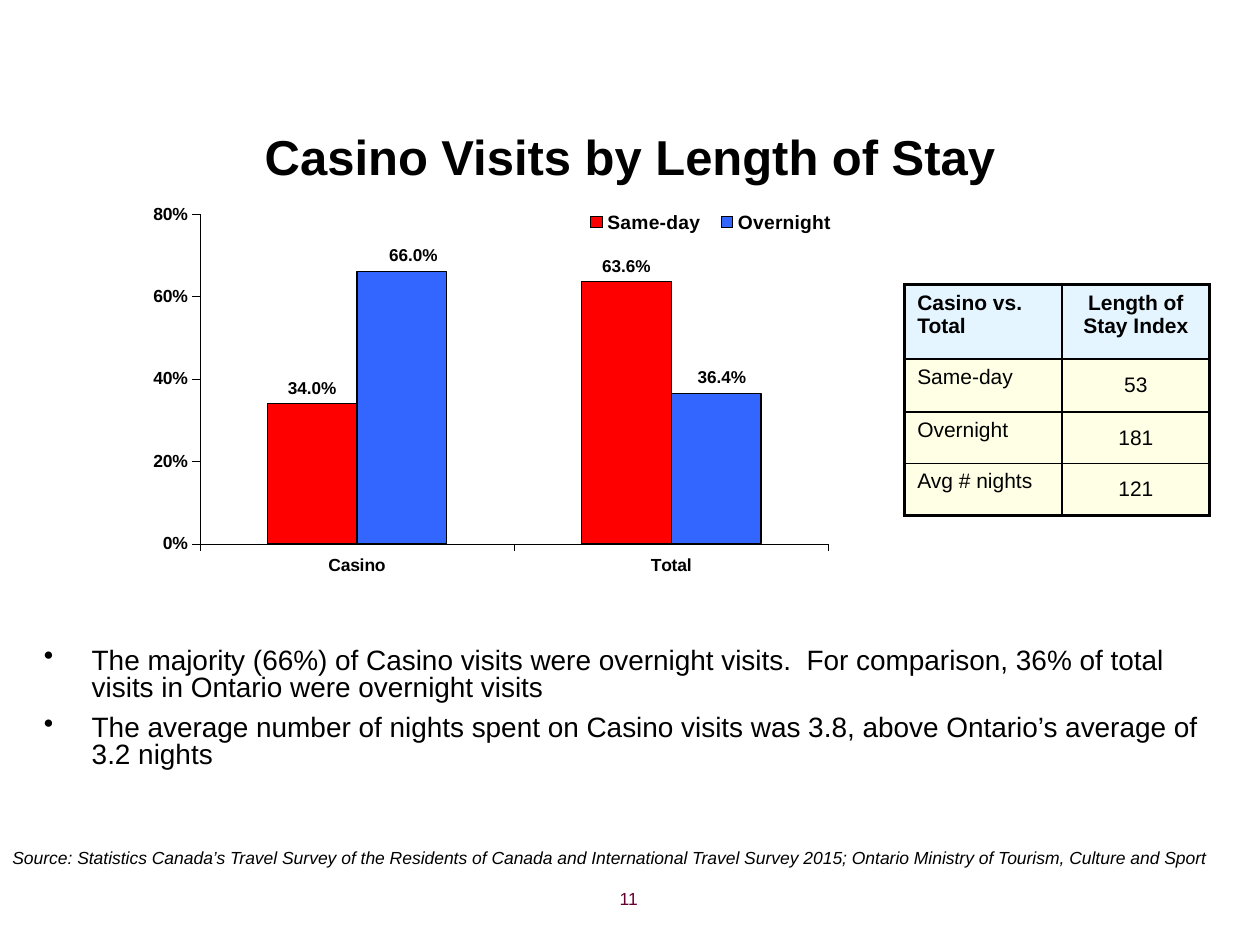
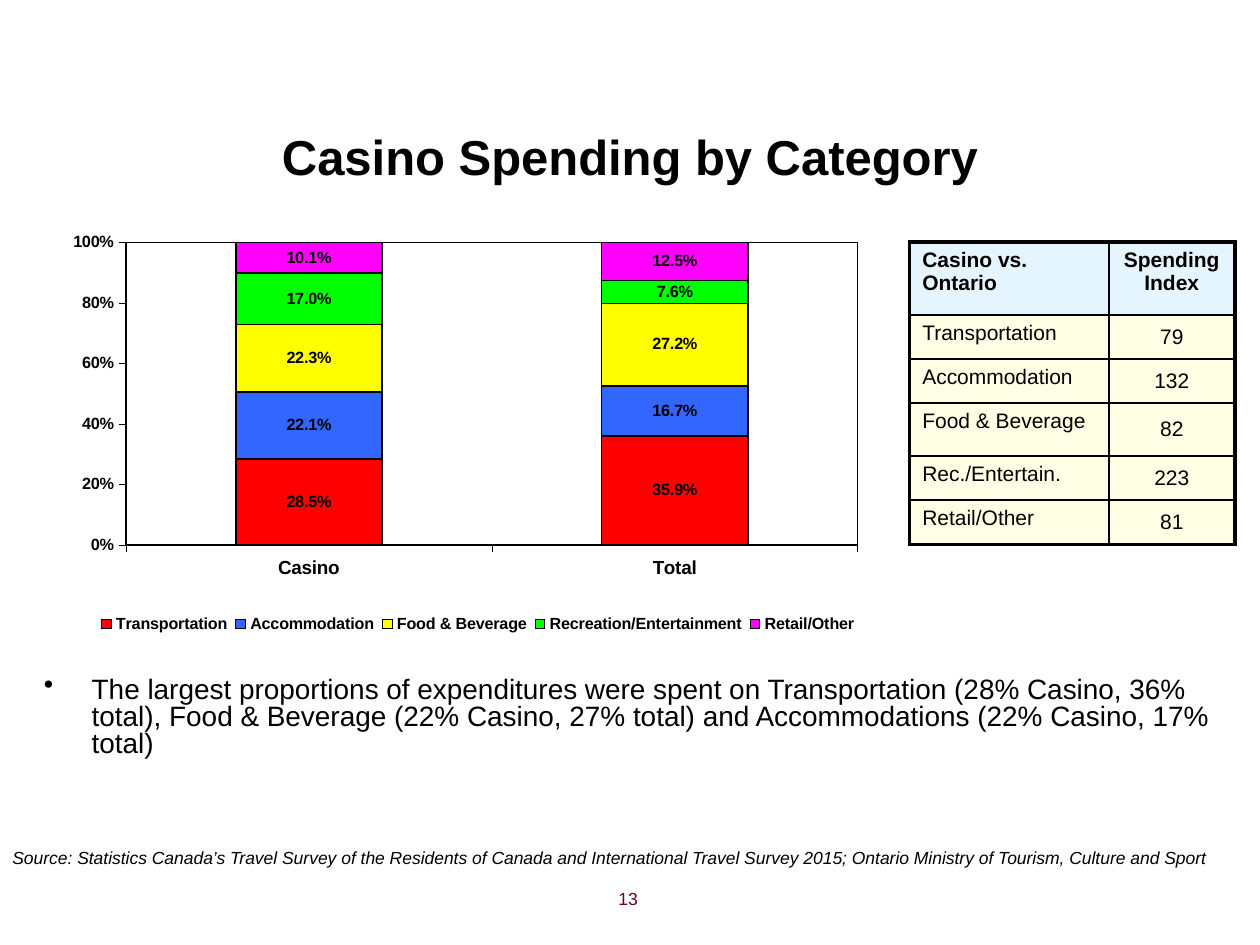
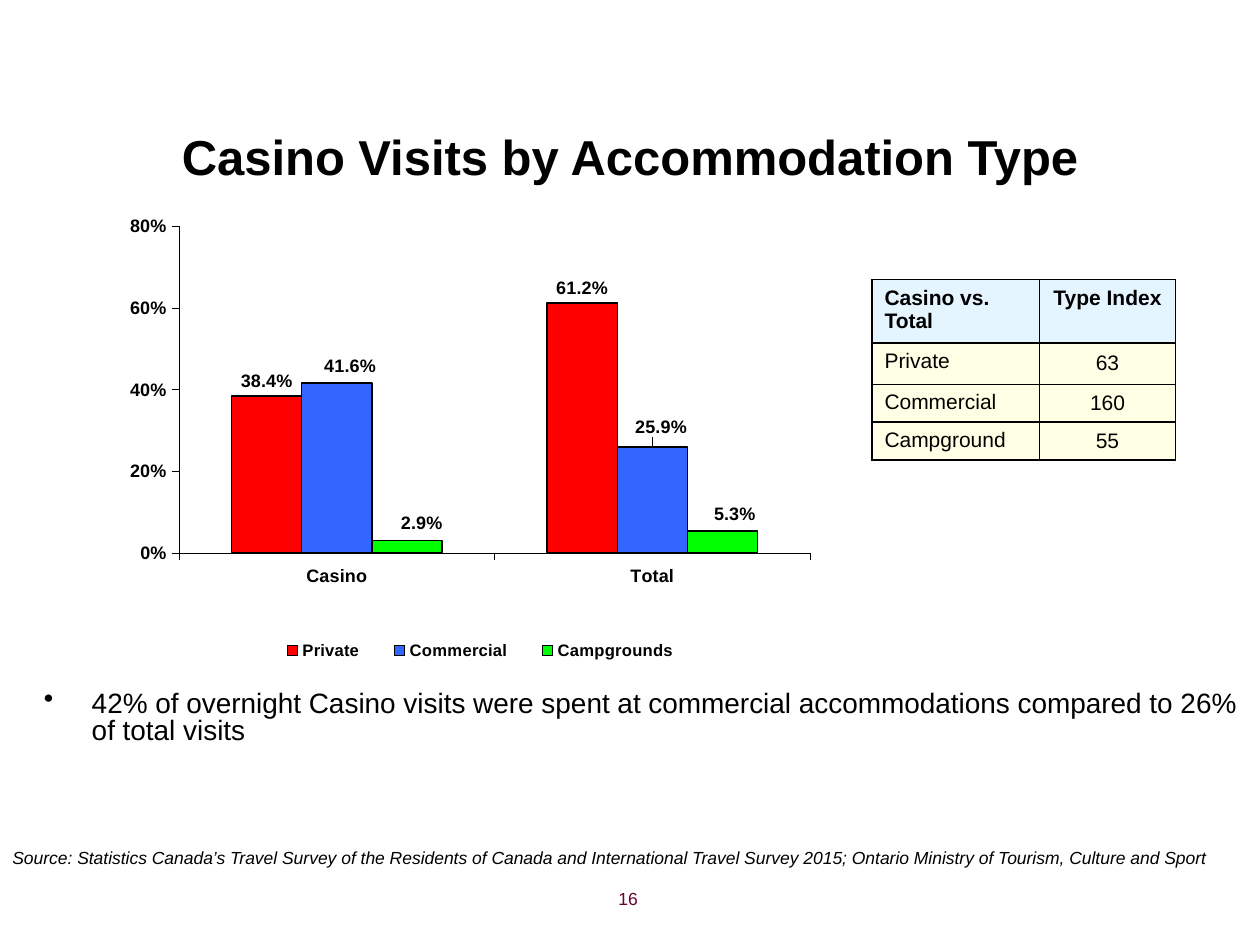
from pptx import Presentation
from pptx.chart.data import CategoryChartData
from pptx.dml.color import RGBColor
from pptx.enum.chart import XL_CHART_TYPE, XL_LABEL_POSITION, XL_LEGEND_POSITION, XL_TICK_MARK
from pptx.enum.text import MSO_ANCHOR, PP_ALIGN
from pptx.oxml import parse_xml
from pptx.oxml.ns import nsdecls, qn
from pptx.util import Inches, Pt

BLACK = RGBColor(0x00, 0x00, 0x00)
PAGE_MAROON = RGBColor(0x66, 0x00, 0x33)
HEADER_BLUE = RGBColor(0xCC, 0xEC, 0xFF)
BODY_CREAM = RGBColor(0xFF, 0xFF, 0xCC)
SERIES_COLORS = [
    RGBColor(0xFF, 0x00, 0x00),
    RGBColor(0x33, 0x66, 0xFF),
    RGBColor(0xFF, 0xFF, 0x00),
    RGBColor(0x00, 0xFF, 0x00),
    RGBColor(0xFF, 0x00, 0xFF),
]
RED, BLUE, YELLOW, GREEN, MAGENTA = SERIES_COLORS
FONT = "Arial"
SOURCE = ("Source: Statistics Canada’s Travel Survey of the Residents of Canada and International "
          "Travel Survey 2015; Ontario Ministry of Tourism, Culture and Sport")
CLUSTERED = XL_CHART_TYPE.COLUMN_CLUSTERED
STACKED = XL_CHART_TYPE.COLUMN_STACKED_100

# Chart layouts are fractions of the chart; label shifts are keyed by (series, category).
SLIDES = [
    dict(
        title="Casino Visits by Length of Stay", page="11",
        chart=dict(
            type=CLUSTERED, at=(0.83, 1.5, 7.64, 3.77), top=0.8, axis_line=0.19, bar_line=0.75,
            plot=(0.099, 0.053, 0.653, 0.694), legend=(0.49, 0.04, 0.28, 0.06),
            sizes=dict(category=10, value=10, legend=11, label=9.8),
            series=[("Same-day", RED, (0.34, 0.636)), ("Overnight", BLUE, (0.66, 0.364))],
            shifts={(1, 0): (0.012, -0.004), (1, 1): (0.006, -0.004)},
        ),
        table=dict(
            at=(7.18, 2.26), columns=(1.25, 1.17), heights=(0.59, 0.42, 0.41, 0.41), frame=2.25,
            rows=[("Casino vs. Total", "Length of Stay Index"), ("Same-day", "53"),
                  ("Overnight", "181"), ("Avg # nights", "121")],
        ),
        bullets_at=(0.25, 5.1, 9.5, 1.67),
        bullets=[
            "The majority (66%) of Casino visits were overnight visits.  For comparison, 36% of "
            "total visits in Ontario were overnight visits",
            "The average number of nights spent on Casino visits was 3.8, above Ontario’s average "
            "of 3.2 nights",
        ],
    ),
    dict(
        title="Casino Spending by Category", page="13",
        chart=dict(
            type=STACKED, at=(0.31, 1.8, 6.57, 3.8), top=1, axis_line=0.25, bar_line=1,
            plot=(0.105, 0.033, 0.884, 0.632), legend=(0.065, 0.8, 0.93, 0.06),
            sizes=dict(category=10.8, value=9.3, legend=9.2, label=9.3),
            series=[("Transportation", RED, (0.285, 0.359)),
                    ("Accommodation", BLUE, (0.221, 0.167)),
                    ("Food & Beverage", YELLOW, (0.223, 0.272)),
                    ("Recreation/Entertainment", GREEN, (0.17, 0.076)),
                    ("Retail/Other", MAGENTA, (0.101, 0.125))],
            shifts={},
        ),
        table=dict(
            at=(7.22, 1.92), columns=(1.58, 1), heights=(0.58, 0.35, 0.35, 0.42, 0.35, 0.35),
            frame=2.25,
            rows=[("Casino vs. Ontario", "Spending Index"), ("Transportation", "79"),
                  ("Accommodation", "132"), ("Food & Beverage", "82"),
                  ("Rec./Entertain.", "223"), ("Retail/Other", "81")],
        ),
        bullets_at=(0.25, 5.33, 9.5, 1.42),
        bullets=[
            "The largest proportions of expenditures were spent on Transportation (28% Casino, 36% "
            "total), Food & Beverage (22% Casino, 27% total) and Accommodations (22% Casino, 17% "
            "total)",
        ],
    ),
    dict(
        title="Casino Visits by Accommodation Type", page="16",
        chart=dict(
            type=CLUSTERED, at=(0.81, 1.59, 5.89, 3.76), top=0.8, axis_line=0.18, bar_line=0.75,
            plot=(0.104, 0.055, 0.85, 0.689), legend=(0.21, 0.92, 0.6, 0.06),
            sizes=dict(category=10.3, value=10.3, legend=9.5, label=10.3),
            series=[("Private", RED, (0.384, 0.612)), ("Commercial", BLUE, (0.416, 0.259)),
                    ("Campgrounds", GREEN, (0.029, 0.053))],
            shifts={(1, 0): (0.018, -0.004), (1, 1): (0.012, -0.01),
                    (2, 0): (0.02, -0.006), (2, 1): (0.017, -0.004)},
        ),
        table=dict(
            at=(6.92, 2.22), columns=(1.33, 1.08), heights=(0.5, 0.33, 0.3, 0.3), frame=1,
            rows=[("Casino vs. Total", "Type Index"), ("Private", "63"),
                  ("Commercial", "160"), ("Campground", "55")],
        ),
        bullets_at=(0.25, 5.44, 9.67, 1.52),
        bullets=[
            "42% of overnight Casino visits were spent at commercial accommodations compared to "
            "26% of total visits",
        ],
    ),
]


def add_text(slide, at, lines, size, color=BLACK, align=PP_ALIGN.LEFT, bold=False, italic=False,
             anchor=MSO_ANCHOR.TOP, bulleted=False):
    frame = slide.shapes.add_textbox(*map(Inches, at)).text_frame
    frame.word_wrap = True
    frame.vertical_anchor = anchor
    frame.text = "\n".join(lines)
    for number, paragraph in enumerate(frame.paragraphs):
        paragraph.alignment = align
        if bulleted:
            paragraph.line_spacing = 0.8
            if number:
                paragraph.space_before = Pt(8)
            properties = paragraph._p.get_or_add_pPr()
            properties.set("marL", str(Inches(0.38)))
            properties.set("indent", str(Inches(-0.38)))
            properties.append(parse_xml(f'<a:buChar {nsdecls("a")} char="•"/>'))
        font = paragraph.font
        font.name, font.size, font.bold, font.italic = FONT, Pt(size), bold, italic
        font.color.rgb = color


def set_layout(parent, index, x, y, size=None, inner=False):
    """Place a chart part: by edge and size, or as a shift when no size is given."""
    for old in parent.findall(qn("c:layout")):
        parent.remove(old)
    parts = '<c:layoutTarget val="inner"/>' if inner else ""
    if size:
        parts += '<c:xMode val="edge"/><c:yMode val="edge"/>'
    parts += f'<c:x val="{x}"/><c:y val="{y}"/>'
    if size:
        parts += f'<c:w val="{size[0]}"/><c:h val="{size[1]}"/>'
    parent.insert(index, parse_xml(
        f'<c:layout {nsdecls("c")}><c:manualLayout>{parts}</c:manualLayout></c:layout>'))


prs = Presentation()
prs.slide_width, prs.slide_height = Inches(10), Inches(7.5)

for content in SLIDES:
    slide = prs.slides.add_slide(prs.slide_layouts[6])
    add_text(slide, (0.5, 0.86, 9, 0.75), [content["title"]], 28, align=PP_ALIGN.CENTER,
             bold=True, anchor=MSO_ANCHOR.MIDDLE)

    # Chart
    spec_chart = content["chart"]
    sizes = spec_chart["sizes"]
    stacked = spec_chart["type"] == STACKED
    data = CategoryChartData(number_format="0.0%")
    data.categories = ["Casino", "Total"]
    for name, _, values in spec_chart["series"]:
        data.add_series(name, values)
    chart = slide.shapes.add_chart(
        spec_chart["type"], *map(Inches, spec_chart["at"]), data).chart
    chart.has_title = False
    chart.has_legend = True
    chart.legend.position = XL_LEGEND_POSITION.BOTTOM if stacked else XL_LEGEND_POSITION.RIGHT
    chart.legend.include_in_layout = False
    chart.value_axis.minimum_scale = 0
    chart.value_axis.maximum_scale = spec_chart["top"]
    chart.value_axis.major_unit = 0.2
    chart.value_axis.has_major_gridlines = False
    chart.value_axis.tick_labels.number_format = "0%"
    chart.value_axis.tick_labels.number_format_is_linked = False
    for axis in (chart.category_axis, chart.value_axis):
        axis.major_tick_mark = XL_TICK_MARK.OUTSIDE
        axis.format.line.color.rgb = BLACK
        axis.format.line.width = Pt(spec_chart["axis_line"])

    plot = chart.plots[0]
    plot.gap_width = 150
    plot.overlap = 100 if stacked else 0
    plot.vary_by_categories = False
    label_position = XL_LABEL_POSITION.CENTER if stacked else XL_LABEL_POSITION.OUTSIDE_END
    fonts = [(chart.font, sizes["label"]), (chart.legend.font, sizes["legend"]),
             (chart.category_axis.tick_labels.font, sizes["category"]),
             (chart.value_axis.tick_labels.font, sizes["value"])]
    for series, (_, color, _) in zip(plot.series, spec_chart["series"]):
        series.format.fill.solid()
        series.format.fill.fore_color.rgb = color
        series.format.line.color.rgb = BLACK
        series.format.line.width = Pt(spec_chart["bar_line"])
        labels = series.data_labels
        labels.show_value = True
        labels.number_format = "0.0%"
        labels.number_format_is_linked = False
        labels.position = label_position
        fonts.append((labels.font, sizes["label"]))
    for (row, category), shift in spec_chart["shifts"].items():
        label = plot.series[row].points[category].data_label
        label.position = label_position
        fonts.append((label.font, sizes["label"]))
        label_xml = chart.element.xpath(
            f'.//c:ser[{row + 1}]//c:dLbl[c:idx/@val="{category}"]')[0]
        set_layout(label_xml, 1, *shift)
    for font, size in fonts:
        font.name, font.size, font.bold = FONT, Pt(size), True
        font.color.rgb = BLACK

    plot_area = chart.element.xpath(".//c:plotArea")[0]
    x, y, *size = spec_chart["plot"]
    set_layout(plot_area, 0, x, y, size, inner=True)
    x, y, *size = spec_chart["legend"]
    set_layout(chart.element.xpath(".//c:legend")[0], 1, x, y, size)
    if stacked:
        plot_area.append(parse_xml(
            f'<c:spPr {nsdecls("c", "a")}><a:noFill/><a:ln w="{Pt(0.75)}"><a:solidFill>'
            f'<a:srgbClr val="{BLACK}"/></a:solidFill></a:ln></c:spPr>'))

    # Index table
    index = content["table"]
    columns, heights, rows = index["columns"], index["heights"], index["rows"]
    table = slide.shapes.add_table(
        len(rows), 2, *map(Inches, (*index["at"], sum(columns), sum(heights)))).table
    for column, width in zip(table.columns, columns):
        column.width = Inches(width)
    for r, (height, texts) in enumerate(zip(heights, rows)):
        table.rows[r].height = Inches(height)
        for c, text in enumerate(texts):
            cell = table.cell(r, c)
            cell.text = text
            paragraph = cell.text_frame.paragraphs[0]
            paragraph.alignment = PP_ALIGN.CENTER if c else PP_ALIGN.LEFT
            font = paragraph.font
            font.name, font.size, font.bold = FONT, Pt(12), r == 0
            font.color.rgb = BLACK
            if r and c:
                cell.vertical_anchor = MSO_ANCHOR.MIDDLE
                cell.margin_left = cell.margin_right = cell.margin_top = cell.margin_bottom = 0
            cell.fill.solid()
            cell.fill.fore_color.rgb = BODY_CREAM if r else HEADER_BLUE
            properties = cell._tc.get_or_add_tcPr()
            properties.find(".//" + qn("a:srgbClr")).append(
                parse_xml(f'<a:alpha {nsdecls("a")} val="50000"/>'))
            outer_sides = dict(L=c == 0, R=c == 1, T=r == 0, B=r == len(rows) - 1)
            for place, (side, outer) in enumerate(outer_sides.items()):
                width = Pt(index["frame"] if outer else 1)
                properties.insert(place, parse_xml(
                    f'<a:ln{side} {nsdecls("a")} w="{width}"><a:solidFill>'
                    f'<a:srgbClr val="{BLACK}"/></a:solidFill></a:ln{side}>'))

    add_text(slide, content["bullets_at"], content["bullets"], 16, bulleted=True)
    add_text(slide, (0, 6.67, 9.8, 0.27), [SOURCE], 10, italic=True)
    add_text(slide, (2.83, 7, 2.33, 0.35), [content["page"]], 10, PAGE_MAROON, PP_ALIGN.RIGHT)

prs.save("out.pptx")
